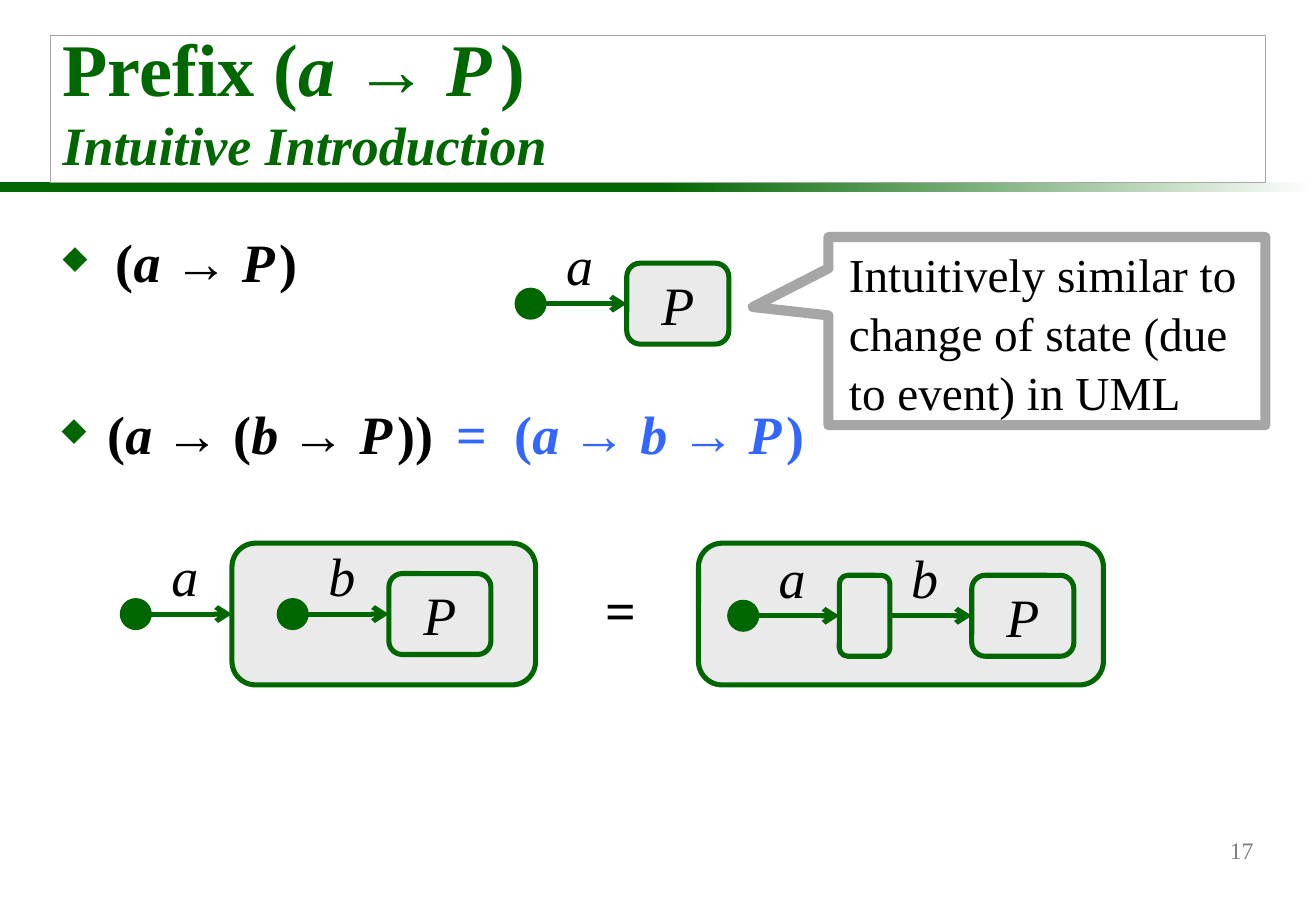
from lxml import etree
from pptx import Presentation
from pptx.dml.color import RGBColor
from pptx.enum.shapes import MSO_CONNECTOR, MSO_SHAPE
from pptx.enum.text import MSO_ANCHOR, PP_ALIGN
from pptx.oxml.ns import qn
from pptx.util import Pt

STRAIGHT = MSO_CONNECTOR.STRAIGHT
RECT, ROUNDED = MSO_SHAPE.RECTANGLE, MSO_SHAPE.ROUNDED_RECTANGLE
OVAL, CALLOUT = MSO_SHAPE.OVAL, MSO_SHAPE.RECTANGULAR_CALLOUT
MIDDLE, BOTTOM = MSO_ANCHOR.MIDDLE, MSO_ANCHOR.BOTTOM
LEFT, CENTER, RIGHT = PP_ALIGN.LEFT, PP_ALIGN.CENTER, PP_ALIGN.RIGHT
LEFT_SIDE, RIGHT_SIDE = 1, 3

FONT = "Times New Roman"
COLORS = {
    "green": "006600", "state": "EAEAEA", "black": "000000", "blue": "3366FF",
    "gray": "A6A6A6", "number": "808080", "white": "FFFFFF",
}


def rgb(name):
    """Return the named colour."""
    return RGBColor.from_string(COLORS[name])


def style(run, size, color, bold=False, italic=False):
    """Format one run."""
    font = run.font
    font.name, font.size, font.bold, font.italic = FONT, Pt(size), bold, italic
    font.color.rgb = rgb(color)


def add_formula(paragraph, formula, size, thin, color):
    """Write pieces parted by bars, with process letters in italics."""
    for piece in formula.split("|"):
        run = paragraph.add_run()
        run.text = piece
        is_thin = piece == " "
        is_letter = piece.strip() in ("a", "b", "P")
        style(run, thin if is_thin else size, color, True, is_thin or is_letter)


def add_shape(slide, kind, box, fill=None, line=None, weight=1):
    """Add a shape without shadow; box is left, top, width, height in points."""
    shape = slide.shapes.add_shape(kind, *map(Pt, box))
    shape.shadow.inherit = False
    if fill:
        shape.fill.solid()
        shape.fill.fore_color.rgb = rgb(fill)
    else:
        shape.fill.background()
    if line:
        shape.line.color.rgb = rgb(line)
        shape.line.width = Pt(weight)
    else:
        shape.line.fill.background()
    return shape


def add_label(slide, box, text, size=32, color="black", align=CENTER, bold=False, italic=False):
    """Add a one-line text box."""
    label = slide.shapes.add_textbox(*map(Pt, box))
    label.text_frame.word_wrap = False
    paragraph = label.text_frame.paragraphs[0]
    paragraph.text, paragraph.alignment = text, align
    style(paragraph.runs[0], size, color, bold, italic)
    return label


def add_title(slide, box):
    """Draw the framed title and the fading rule below it."""
    left, top, width, height = box
    half = 390
    for x, fading in ((0, False), (half, True)):
        rule = add_shape(slide, RECT, (x, top + height, half, 5.8), "green")
        if fading:
            rule.fill.gradient()
            rule.fill.gradient_angle = 0
            for stop, position, color in zip(rule.fill.gradient_stops, (0, 1), ("green", "white")):
                stop.position = position
                stop.color.rgb = rgb(color)
    frame = add_shape(slide, RECT, box, line="gray", weight=0.75).text_frame
    frame.word_wrap, frame.vertical_anchor = True, BOTTOM
    heading, subtitle = frame.paragraphs[0], frame.add_paragraph()
    heading.alignment = subtitle.alignment = LEFT
    add_formula(heading, "Prefix (|a |→ |P| |)", 44, 20, "green")
    subtitle.text = "Intuitive Introduction"
    style(subtitle.runs[0], 32, "green", True, True)


def add_expression(slide, box, formula, hang, color="black", bullet=True):
    """Add a formula line with an optional diamond bullet."""
    frame = slide.shapes.add_textbox(*map(Pt, box)).text_frame
    frame.word_wrap = True
    paragraph = frame.paragraphs[0]
    add_formula(paragraph, formula, 32, 12, color)
    props = paragraph._p.get_or_add_pPr()
    props.set("marL", str(Pt(hang)))
    props.set("indent", str(-Pt(hang)))
    before = etree.SubElement(props, qn("a:spcBef"))
    etree.SubElement(before, qn("a:spcPct")).set("val", "20000")
    if bullet:
        tint = etree.SubElement(props, qn("a:buClr"))
        etree.SubElement(tint, qn("a:srgbClr")).set("val", COLORS["green"])
        etree.SubElement(props, qn("a:buSzPct")).set("val", "60000")
        etree.SubElement(props, qn("a:buChar")).set("char", "◆")
    return paragraph


def add_state(slide, left, axis, width=60.5, height=48, name=None):
    """Add a rounded state box centred on a horizontal axis."""
    box = (left, axis - height / 2, width, height)
    state = add_shape(slide, ROUNDED, box, "state", "green", 3)
    state.adjustments[0] = 0.167
    if name:
        frame = state.text_frame
        frame.word_wrap, frame.vertical_anchor = False, MIDDLE
        frame.text = name
        frame.paragraphs[0].alignment = CENTER
        style(frame.paragraphs[0].runs[0], 32, "black", italic=True)
    return state


def add_transition(slide, event, target, source=None):
    """Add an event arrow into a state, from a start dot or another state."""
    end = target.left.pt
    axis = target.top.pt + target.height.pt / 2
    arrow = slide.shapes.add_connector(STRAIGHT, Pt(end - 57), Pt(axis), Pt(end), Pt(axis))
    if source:
        arrow.begin_connect(source, RIGHT_SIDE)
    else:
        add_shape(slide, OVAL, (end - 66, axis - 9, 18, 18), "green", "green")
    arrow.end_connect(target, LEFT_SIDE)
    arrow.line.color.rgb = rgb("green")
    arrow.line.width = Pt(3)
    etree.SubElement(arrow.line._get_or_add_ln(), qn("a:tailEnd")).set("type", "arrow")
    etree.SubElement(arrow._element.spPr, qn("a:effectLst"))
    add_label(slide, (end - 43, axis - 46, 30, 45), event, italic=True)


def add_simple_prefix(slide, left, axis):
    """Draw event a leading to P."""
    add_transition(slide, "a", add_state(slide, left, axis, name="P"))


def add_nested_prefix(slide, left, axis):
    """Draw event a leading to a state that holds event b and P."""
    add_transition(slide, "a", add_state(slide, left, axis, 180, 84))
    add_transition(slide, "b", add_state(slide, left + 93, axis, name="P"))


def add_chained_prefix(slide, left, axis):
    """Draw events a and b in sequence inside one state."""
    add_state(slide, left, axis, 240, 84)
    middle = add_state(slide, left + 83.5, axis + 1, 30)
    final = add_state(slide, left + 162, axis + 1, name="P")
    add_transition(slide, "a", middle)
    add_transition(slide, "b", final, middle)


def add_callout(slide, box):
    """Add the remark that points at the simple prefix."""
    callout = add_shape(slide, CALLOUT, box, line="gray", weight=6)
    callout.adjustments[0], callout.adjustments[1] = -0.673, -0.128
    frame = callout.text_frame
    frame.word_wrap, frame.vertical_anchor = True, MIDDLE
    frame.margin_left = Pt(12.2)
    frame.text = "Intuitively similar to change of state (due to event) in UML"
    remark = frame.paragraphs[0]
    remark.alignment, remark.line_spacing = LEFT, 1.04
    style(remark.runs[0], 28, "black")


def main():
    """Build the slide and save it."""
    deck = Presentation()
    deck.slide_width, deck.slide_height = Pt(780), Pt(540)
    slide = deck.slides.add_slide(deck.slide_layouts[6])
    add_title(slide, (30, 21, 720, 87))
    add_expression(slide, (30, 132, 270, 54), "(|a |→ |P| |)", 31.5)
    add_expression(slide, (29.5, 234, 246, 54), "(|a |→ (|b |→ |P| |))", 27)
    equivalent = add_expression(
        slide, (263.5, 234, 300, 54), "= |(|a |→ |b |→ |P| |)", 27, "blue", False)
    equivalent.runs[0]._r.get_or_add_rPr().set("spc", "400")
    add_simple_prefix(slide, 371.5, 180)
    add_nested_prefix(slide, 137.5, 364)
    add_label(slide, (351.5, 338, 33, 46), "=", bold=True)
    add_chained_prefix(slide, 414, 364)
    add_callout(slide, (491, 140.5, 259, 111.5))
    number = add_label(slide, (587.5, 486, 162.5, 36), "17", 14, "number", RIGHT)
    number.text_frame.word_wrap = True
    number.text_frame.vertical_anchor = MIDDLE
    deck.save("out.pptx")


if __name__ == "__main__":
    main()
